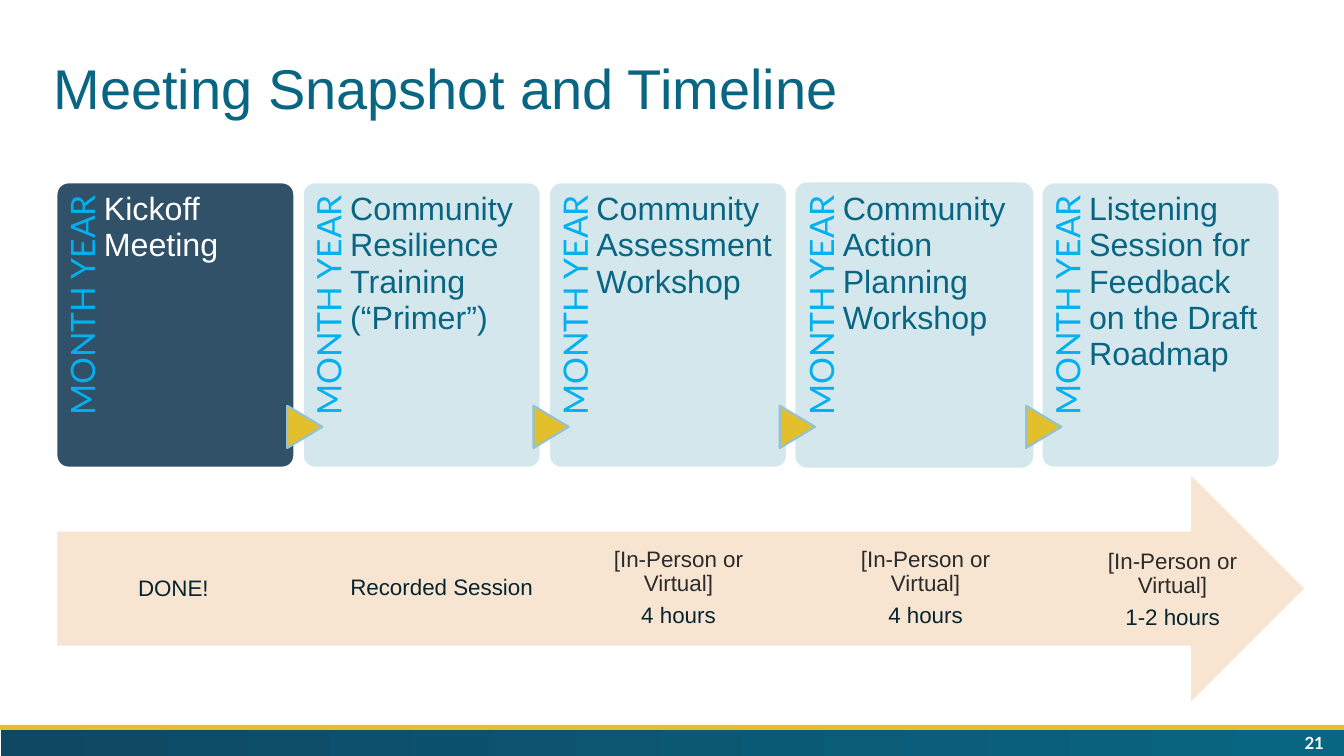
from pptx import Presentation
from pptx.dml.color import RGBColor
from pptx.enum.shapes import MSO_SHAPE as Shape
from pptx.enum.text import MSO_ANCHOR as Anchor, PP_ALIGN as Align
from pptx.util import Inches, Pt

WHITE = RGBColor(0xFF, 0xFF, 0xFF)
NAVY = RGBColor(0x0E, 0x48, 0x62)
TEAL = RGBColor(0x09, 0x66, 0x82)
SLATE = RGBColor(0x30, 0x51, 0x67)
PALE_BLUE = RGBColor(0xD4, 0xE7, 0xED)
SKY = RGBColor(0x00, 0xB0, 0xF0)
GOLD = RGBColor(0xE2, 0xBF, 0x2B)
GOLD_EDGE = RGBColor(0x93, 0xC2, 0xD3)
SAND = RGBColor(0xF7, 0xE5, 0xD1)
CHARCOAL = RGBColor(0x2B, 0x2B, 0x2B)
INK = RGBColor(0x07, 0x24, 0x31)

FORMAT = "[In-Person or Virtual]"
# Meeting, card fill, card edge, text colour
MEETINGS = [
    ("Kickoff Meeting", SLATE, WHITE, WHITE),
    ("Community Resilience Training (“Primer”)", PALE_BLUE, WHITE, TEAL),
    ("Community Assessment Workshop", PALE_BLUE, WHITE, TEAL),
    ("Community Action Planning Workshop", PALE_BLUE, None, TEAL),
    ("Listening Session for Feedback on the Draft Roadmap",
     PALE_BLUE, WHITE, TEAL),
]
# Left, top, lines with their colours
SESSIONS = [
    (0.79, 5.27, [("DONE!", INK)]),
    (3.45, 5.26, [("Recorded Session", INK)]),
    (5.8, 5.26, [(FORMAT, CHARCOAL), ("4 hours", INK)]),
    (8.25, 5.26, [(FORMAT, CHARCOAL), ("4 hours", INK)]),
    (10.7, 5.28, [(FORMAT, CHARCOAL), ("1-2 hours", INK)]),
]
CARD_LEFT, CARD_TOP, CARD_PITCH = 0.56, 1.81, 2.443
CARD_WIDTH, CARD_HEIGHT = 2.36, 2.83


def add_block(slide, kind, box, color, edge=None):
    block = slide.shapes.add_shape(kind, *map(Inches, box))
    block.shadow.inherit = False
    block.fill.solid()
    block.fill.fore_color.rgb = color
    if edge is None:
        block.line.fill.background()
    else:
        block.line.color.rgb = edge
        block.line.width = Pt(1.5)
    return block


def add_label(slide, box, lines, size, font="Arial", align=Align.LEFT,
              anchor=Anchor.TOP, insets=(0, 0.09, 0, 0), spacing=0.9,
              bold=False):
    """Add a text box; lines holds (text, colour) pairs."""
    label = slide.shapes.add_textbox(*map(Inches, box))
    frame = label.text_frame
    frame.word_wrap = True
    frame.vertical_anchor = anchor
    (frame.margin_left, frame.margin_top,
     frame.margin_right, frame.margin_bottom) = map(Inches, insets)
    for index, (text, color) in enumerate(lines):
        paragraph = frame.add_paragraph() if index else frame.paragraphs[0]
        paragraph.text = text
        paragraph.alignment = align
        paragraph.line_spacing = spacing
        paragraph.space_after = Pt(size * 0.35)
        paragraph.font.name = font
        paragraph.font.size = Pt(size)
        paragraph.font.bold = bold
        paragraph.font.color.rgb = color
    return label


def add_title(slide, text):
    title = slide.shapes.title
    title.left, title.top = Inches(0.43), Inches(0.54)
    title.width, title.height = Inches(12.51), Inches(0.73)
    title.text_frame.vertical_anchor = Anchor.MIDDLE
    paragraph = title.text_frame.paragraphs[0]
    paragraph.text = text
    paragraph.alignment = Align.LEFT
    paragraph.line_spacing = 0.9
    paragraph.font.name = "Arial"
    paragraph.font.size = Pt(40)
    paragraph.font.color.rgb = TEAL


def add_footer(slide, number):
    band = add_block(slide, Shape.RECTANGLE, (0.01, 7.24, 13.33, 0.28), TEAL)
    band.fill.gradient()
    band.fill.gradient_angle = 0
    for stop, color, position in zip(band.fill.gradient_stops,
                                     (NAVY, TEAL), (0, 0.98)):
        stop.color.rgb = color
        stop.position = position
    add_block(slide, Shape.RECTANGLE, (0, 7.19, 13.33, 0.05), GOLD)
    add_label(slide, (10.23, 7.24, 3, 0.26), [(number, WHITE)], 12, "Lato",
              Align.RIGHT, Anchor.MIDDLE, (0.1, 0.05, 0.1, 0.05), 1, True)


def add_timeline(slide):
    add_block(slide, Shape.RIGHT_ARROW, (0.56, 4.69, 12.39, 2.3), SAND, WHITE)
    for left, top, lines in SESSIONS:
        add_label(slide, (left, top, 1.86, 1.15), lines, 16,
                  align=Align.CENTER, anchor=Anchor.MIDDLE,
                  insets=(0, 0.18, 0, 0.18))


def add_meeting(slide, index, name, fill, edge, color):
    left = CARD_LEFT + index * CARD_PITCH
    card = add_block(slide, Shape.ROUNDED_RECTANGLE,
                     (left, CARD_TOP, CARD_WIDTH, CARD_HEIGHT), fill, edge)
    card.adjustments[0] = 0.05
    month = add_label(slide, (left - 0.92, 2.74, 2.32, 0.47),
                      [("MONTH YEAR", SKY)], 24, "Lato", Align.RIGHT,
                      insets=(0, 0.09, 0.12, 0))
    month.rotation = 270
    if index:
        pointer = add_block(slide, Shape.FLOWCHART_EXTRACT,
                            (left - 0.19, 4.06, 0.42, 0.35), GOLD, GOLD_EDGE)
        pointer.rotation = 90
    add_label(slide, (left + 0.47, CARD_TOP, 1.76, CARD_HEIGHT),
              [(name, color)], 23, spacing=0.94)


def main():
    deck = Presentation()
    deck.slide_width, deck.slide_height = Inches(13.33), Inches(7.5)
    slide = deck.slides.add_slide(deck.slide_layouts[5])
    add_title(slide, "Meeting Snapshot and Timeline")
    add_timeline(slide)
    for index, meeting in enumerate(MEETINGS):
        add_meeting(slide, index, *meeting)
    add_footer(slide, "21")
    deck.save("out.pptx")


if __name__ == "__main__":
    main()
